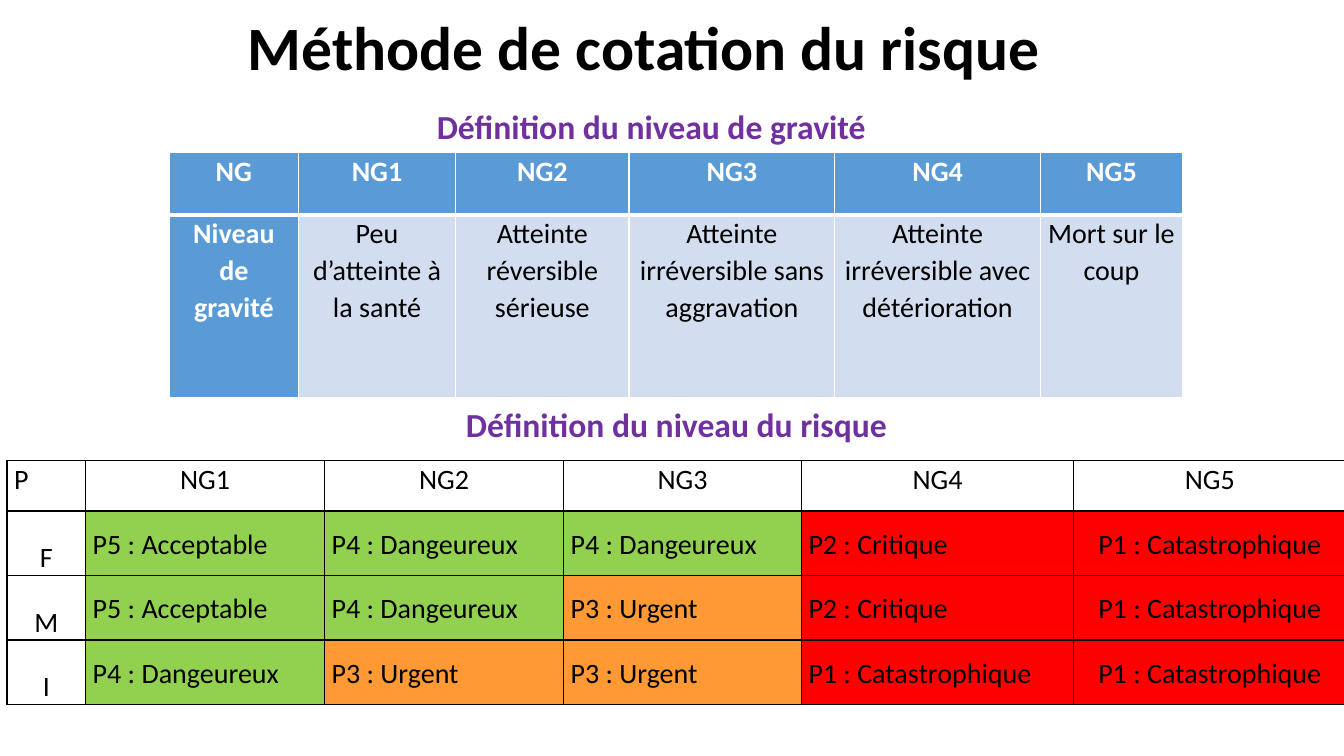
import dataclasses

import lxml.etree
import pptx
import pptx.dml.color
import pptx.enum.text
import pptx.oxml.ns
import pptx.util

Inches = pptx.util.Inches
Pt = pptx.util.Pt
ALIGN = pptx.enum.text.PP_ALIGN
ANCHOR = pptx.enum.text.MSO_ANCHOR


@dataclasses.dataclass(frozen=True)
class Theme:
    font: str = "Calibri"
    title_size: int = 44
    heading_size: int = 24
    cell_size: int = 20
    black: str = "000000"
    white: str = "FFFFFF"
    purple: str = "7030A0"
    blue: str = "5B9BD5"
    pale_blue: str = "D2DEEF"
    green: str = "92D050"
    orange: str = "FF9933"
    red: str = "FF0000"


THEME = Theme()


def style_text(paragraph, size, color, bold, align):
    paragraph.alignment = align
    for run in paragraph.runs:
        run.font.name = THEME.font
        run.font.size = Pt(size)
        run.font.bold = bold
        run.font.color.rgb = pptx.dml.color.RGBColor.from_string(color)


def fill_cell(cell, text, color, bold, align, anchor, fill, line, bottom_width=1):
    """Write one table cell with its borders; a fill of None leaves it clear."""
    cell.text_frame.text = text
    cell.margin_left = cell.margin_right = Inches(0.07)
    cell.margin_top = cell.margin_bottom = 0
    cell.vertical_anchor = anchor
    paragraph = cell.text_frame.paragraphs[0]
    paragraph.line_spacing = 1.07
    paragraph.space_after = Pt(8)
    style_text(paragraph, THEME.cell_size, color, bold, align)

    qn = pptx.oxml.ns.qn
    properties = cell._tc.get_or_add_tcPr()
    for side in "LRTB":
        width = bottom_width if side == "B" else 1
        border = lxml.etree.SubElement(properties, qn("a:ln" + side), w=str(Pt(width)))
        solid = lxml.etree.SubElement(border, qn("a:solidFill"))
        lxml.etree.SubElement(solid, qn("a:srgbClr"), val=line)

    if fill is None:
        cell.fill.background()
    else:
        cell.fill.solid()
        cell.fill.fore_color.rgb = pptx.dml.color.RGBColor.from_string(fill)


deck = pptx.Presentation()
deck.slide_width = Inches(13.33)
deck.slide_height = Inches(7.5)
slide = deck.slides.add_slide(deck.slide_layouts[5])

# Title
title = slide.shapes.title
title.left, title.top, title.width, title.height = 0, 0, Inches(11.5), Inches(1)
title.left = Inches(0.71)
title.text_frame.text = "Méthode de cotation du risque "
title.text_frame.vertical_anchor = ANCHOR.MIDDLE
title.text_frame.paragraphs[0].line_spacing = 0.9
style_text(title.text_frame.paragraphs[0], THEME.title_size, THEME.black, True, ALIGN.CENTER)

# Headings above the two tables
for heading_text, left, top, width in [
    ("Définition du niveau de gravité", 4.21, 1, 4.5),
    ("Définition du niveau du risque", 4.5, 3.96, 4.42),
]:
    heading = slide.shapes.add_textbox(Inches(left), Inches(top), Inches(width), Inches(0.5))
    heading.text_frame.word_wrap = False
    heading.text_frame.auto_size = pptx.enum.text.MSO_AUTO_SIZE.SHAPE_TO_FIT_TEXT
    heading.text_frame.text = heading_text
    style_text(heading.text_frame.paragraphs[0], THEME.heading_size, THEME.purple, True, ALIGN.CENTER)

# Empty grids for severity and risk
severity_levels = ["NG1", "NG2", "NG3", "NG4", "NG5"]
grids = []
for left, top, widths, heights in [
    (1.68, 1.51, [1.28, 1.56, 1.72, 2.04, 2.04, 1.41], [0.62, 1.82]),
    (0.07, 4.57, [0.78, 2.37, 2.37, 2.36, 2.7, 2.7], [0.5, 0.64, 0.64, 0.64]),
]:
    grid = slide.shapes.add_table(
        len(heights), len(widths), Inches(left), Inches(top),
        Inches(sum(widths)), Inches(sum(heights)),
    ).table
    for column, width in zip(grid.columns, widths):
        column.width = Inches(width)
    for row, height in zip(grid.rows, heights):
        row.height = Inches(height)
    grids.append(grid)
severity_table, risk_table = grids

# Severity table
severity_rows = [
    ["NG"] + severity_levels,
    [
        "Niveau de gravité",
        "Peu d’atteinte à la santé",
        "Atteinte réversible sérieuse",
        "Atteinte irréversible sans aggravation",
        "Atteinte irréversible avec détérioration",
        "Mort sur le coup",
    ],
]
for r, texts in enumerate(severity_rows):
    for c, text in enumerate(texts):
        is_header = r == 0 or c == 0
        fill_cell(
            severity_table.cell(r, c), text,
            color=THEME.white if is_header else THEME.black,
            bold=is_header,
            align=ALIGN.CENTER,
            anchor=ANCHOR.TOP,
            fill=THEME.blue if is_header else THEME.pale_blue,
            line=THEME.white,
            bottom_width=3 if r == 0 else 1,
        )

# Risk table: the priority gives each cell its wording and colour
priorities = {
    "P1": ("Catastrophique", THEME.red),
    "P2": ("Critique", THEME.red),
    "P3": ("Urgent", THEME.orange),
    "P4": ("Dangeureux", THEME.green),
    "P5": ("Acceptable", THEME.green),
}
risk_rows = [
    ["P"] + severity_levels,
    ["F", "P5", "P4", "P4", "P2", "P1"],
    ["M", "P5", "P4", "P3", "P2", "P1"],
    ["I", "P4", "P3", "P3", "P1", "P1"],
]
last_column = len(severity_levels)
for r, entries in enumerate(risk_rows):
    for c, entry in enumerate(entries):
        text, fill = entry, None
        if r == 0:
            anchor = ANCHOR.TOP
            align = ALIGN.LEFT if c == 0 else ALIGN.CENTER
        elif c == 0:
            anchor, align = ANCHOR.BOTTOM, ALIGN.CENTER
        else:
            label, fill = priorities[entry]
            text = f"{entry} : {label}"
            anchor = ANCHOR.MIDDLE
            align = ALIGN.CENTER if c == last_column else ALIGN.LEFT
        fill_cell(
            risk_table.cell(r, c), text, THEME.black, False,
            align, anchor, fill, line=THEME.black,
        )

deck.save("out.pptx")
